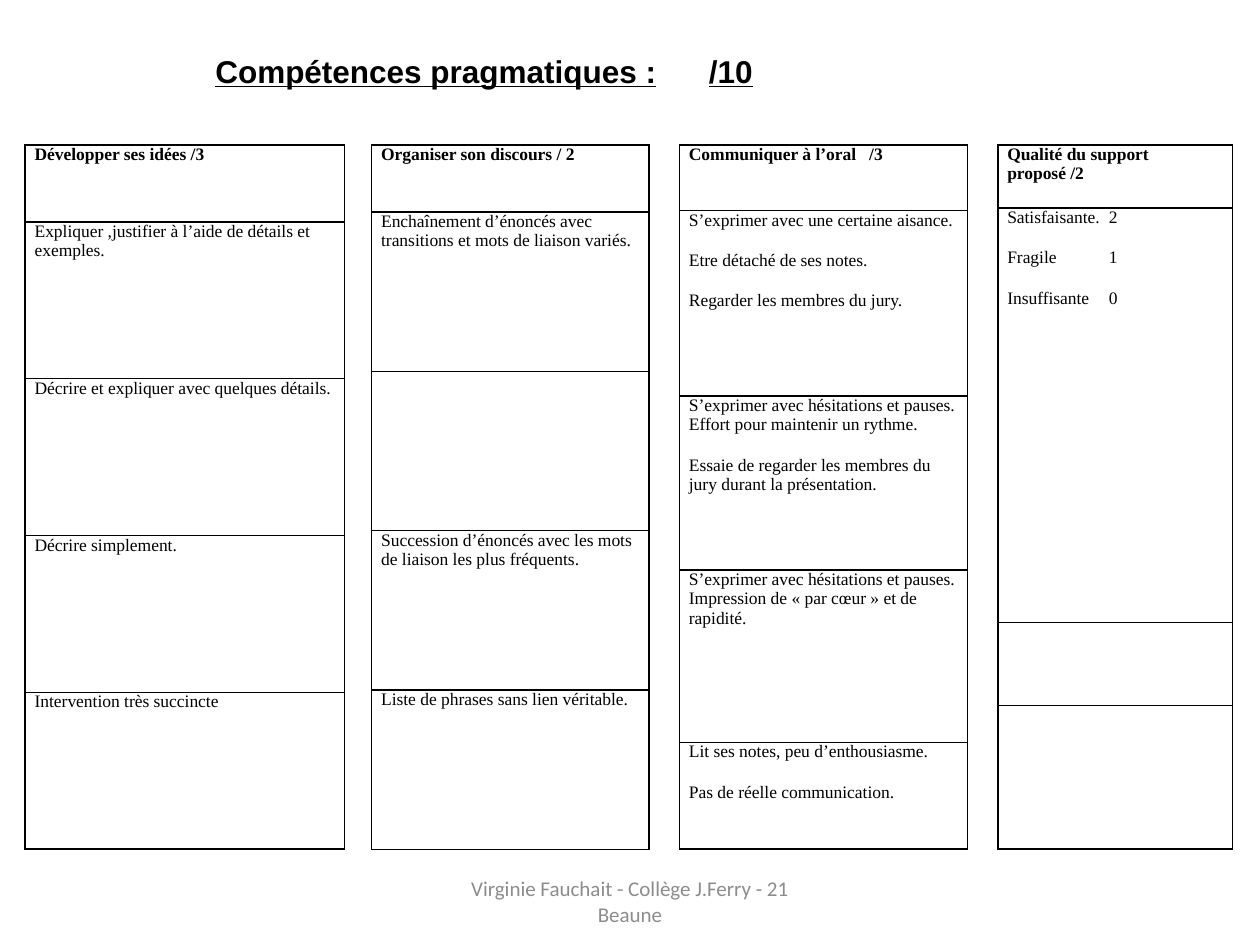
"""Build a one-slide oral assessment grid with four criteria tables."""
from lxml.etree import SubElement
from pptx import Presentation
from pptx.dml.color import RGBColor
from pptx.enum.text import MSO_ANCHOR as Anchor, PP_ALIGN as Align
from pptx.oxml.ns import qn
from pptx.util import Pt

COLORS = {"ink": "000000", "paper": "FFFFFF", "footer": "8C8C8C"}
TITLE = {"name": "Arial", "size": Pt(18), "bold": True, "underline": True}
HEADER = {"name": "Times New Roman", "size": Pt(10), "bold": True}
BODY = HEADER | {"bold": False}
FOOTER = {"name": "Calibri", "size": Pt(12)}
TABLE_TOP, TABLE_HEIGHT = 82.8, 402.5


def write(paragraph, text, style, color="ink", tab=None):
    if tab:
        stops = SubElement(paragraph._p.get_or_add_pPr(), qn("a:tabLst"))
        SubElement(stops, qn("a:tab"), pos=str(Pt(tab)), algn="l")
    run = paragraph.add_run()
    run.text = text
    for name, value in style.items():
        setattr(run.font, name, value)
    run.font.color.rgb = RGBColor.from_string(COLORS[color])


def format_cell(cell):
    cell.margin_left = cell.margin_right = Pt(5.4)
    cell.margin_top = cell.margin_bottom = 0
    properties = cell._tc.get_or_add_tcPr()
    for side in ("lnL", "lnR", "lnT", "lnB"):
        line = SubElement(properties, qn(f"a:{side}"), w=str(Pt(1)))
        fill = SubElement(line, qn("a:solidFill"))
        SubElement(fill, qn("a:srgbClr"), val=COLORS["ink"])
    cell.fill.solid()
    cell.fill.fore_color.rgb = RGBColor.from_string(COLORS["paper"])


presentation = Presentation()
presentation.slide_width, presentation.slide_height = Pt(720), Pt(540)
slide = presentation.slides.add_slide(presentation.slide_layouts[6])

title = slide.shapes.add_textbox(Pt(116), Pt(29.5), Pt(560), Pt(36)).text_frame
title.word_wrap = True
title.margin_top = 0
write(title.paragraphs[0], "Compétences pragmatiques :\t/10", TITLE, tab=282)

criteria = [
    {"left": 14.4, "width": 182.5, "header": 44, "rows": None, "tab": None, "cells": [
        ["Développer ses idées /3"],
        ["Expliquer ,justifier à l’aide de détails et exemples."],
        ["Décrire et expliquer avec quelques détails."],
        ["Décrire simplement."],
        ["Intervention très succincte"]]},
    {"left": 212.4, "width": 158.5, "header": 38.3, "rows": None, "tab": None, "cells": [
        ["Organiser son discours / 2"],
        ["Enchaînement d’énoncés avec transitions et mots de liaison variés."],
        [],
        ["Succession d’énoncés avec les mots de liaison les plus fréquents."],
        ["Liste de phrases sans lien véritable."]]},
    {"left": 388.3, "width": 164.5, "header": 37.5, "rows": [106, 99.5, 98.5, 61], "tab": 103, "cells": [
        ["Communiquer à l’oral\t/3"],
        ["S’exprimer avec une certaine aisance.", "Etre détaché de ses notes.",
         "Regarder les membres du jury."],
        ["S’exprimer avec hésitations et pauses. Effort pour maintenir un rythme.",
         "Essaie de regarder les membres du jury durant la présentation."],
        ["S’exprimer avec hésitations et pauses. Impression de « par cœur » et de rapidité."],
        ["Lit ses notes, peu d’enthousiasme.", "Pas de réelle communication."]]},
    {"left": 570.2, "width": 134, "header": 36, "rows": [237, 47.5, 82], "tab": 58, "cells": [
        ["Qualité du support proposé /2"],
        ["Satisfaisante.\t2", "Fragile\t1", "Insuffisante\t0"],
        [],
        []]},
]

for criterion in criteria:
    cells = criterion["cells"]
    levels = len(cells) - 1
    equal_rows = [(TABLE_HEIGHT - criterion["header"]) / levels] * levels
    heights = [criterion["header"]] + (criterion["rows"] or equal_rows)
    table = slide.shapes.add_table(
        len(cells), 1, Pt(criterion["left"]), Pt(TABLE_TOP),
        Pt(criterion["width"]), Pt(TABLE_HEIGHT)).table
    table.first_row = table.horz_banding = False
    for index, (texts, height) in enumerate(zip(cells, heights)):
        table.rows[index].height = Pt(height)
        cell = table.cell(index, 0)
        format_cell(cell)
        frame = cell.text_frame
        for position, text in enumerate(texts):
            paragraph = frame.add_paragraph() if position else frame.paragraphs[0]
            paragraph.space_before = Pt(6 if position else 0)
            paragraph.space_after = Pt(6)
            tab = criterion["tab"] if "\t" in text else None
            write(paragraph, text, BODY if index else HEADER, tab=tab)

footer = slide.shapes.add_textbox(Pt(246), Pt(500.5), Pt(228), Pt(28.8)).text_frame
footer.word_wrap = True
footer.vertical_anchor = Anchor.MIDDLE
footer.paragraphs[0].alignment = Align.CENTER
write(footer.paragraphs[0], "Virginie Fauchait - Collège J.Ferry - 21 Beaune", FOOTER, "footer")

presentation.save("out.pptx")
